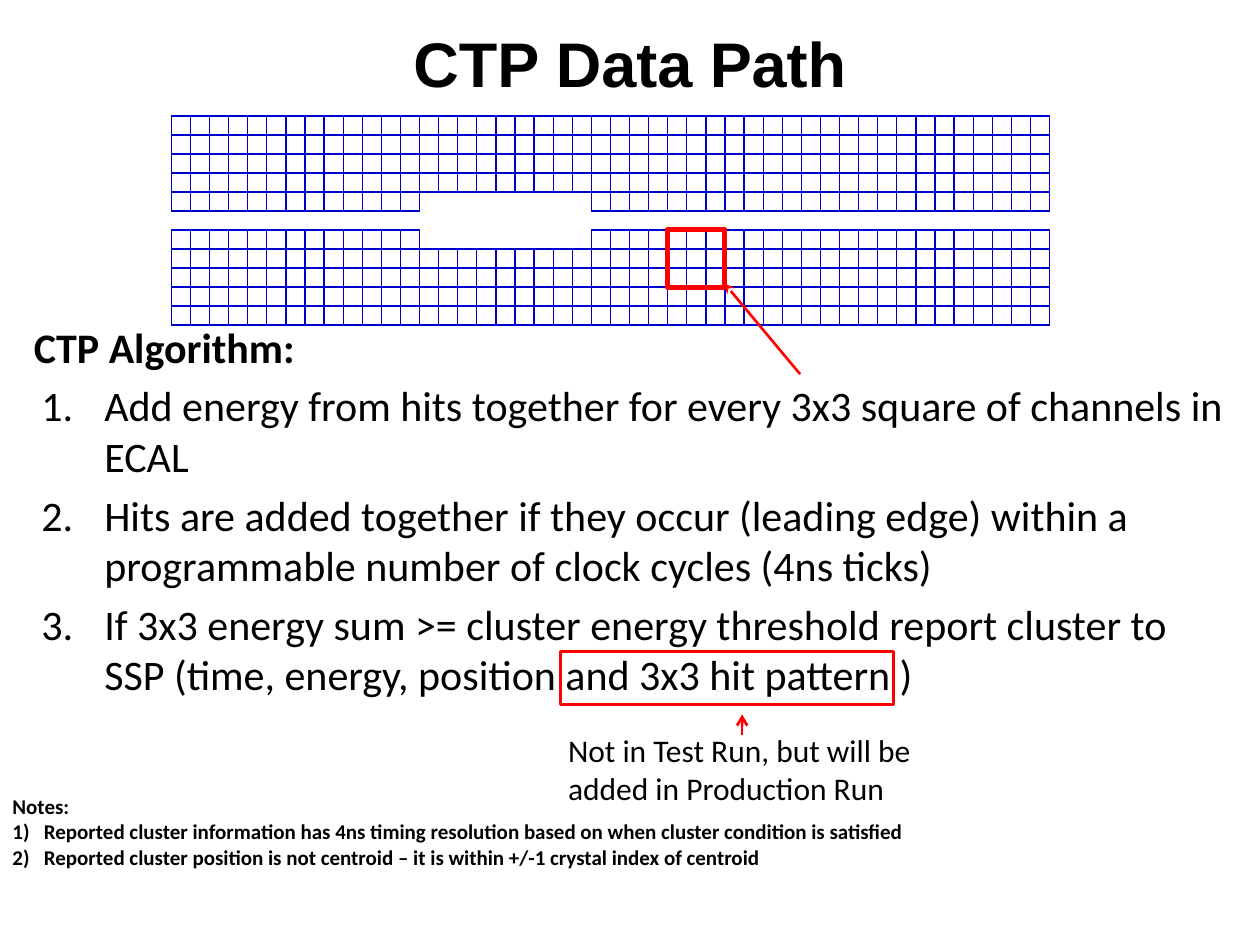
import pptx
import pptx.util
import pptx.dml.color
import pptx.enum.shapes
import pptx.enum.text
import pptx.oxml
import pptx.oxml.ns

Inches = pptx.util.Inches
Pt = pptx.util.Pt
BLUE = "0000CC"
RED = "FF0000"
BLACK = "000000"
COLUMNS, ROWS = 46, 11
HOLE_LEFT, HOLE_RIGHT = 13, 22


def color(value):
    return pptx.dml.color.RGBColor.from_string(value)


def add_element(parent, tag, **attributes):
    element = pptx.oxml.parse_xml(f"<a:{tag} {pptx.oxml.ns.nsdecls('a')}/>")
    for name, value in attributes.items():
        element.set(name, str(value))
    parent.append(element)


def add_line(shapes, start, end, line_color, width, arrowhead=None):
    points = [Inches(value) for value in (*start, *end)]
    connector = shapes.add_connector(pptx.enum.shapes.MSO_CONNECTOR.STRAIGHT, *points)
    connector.line.color.rgb = color(line_color)
    connector.line.width = Pt(width)
    if arrowhead:
        add_element(connector.line._get_or_add_ln(), "tailEnd", type=arrowhead)
    add_element(connector._element.spPr, "effectLst")


def add_frame(slide, box, width):
    shape = slide.shapes.add_shape(
        pptx.enum.shapes.MSO_SHAPE.RECTANGLE, *[Inches(value) for value in box])
    shape.shadow.inherit = False
    shape.fill.background()
    shape.line.color.rgb = color(RED)
    shape.line.width = Pt(width)


def add_text(slide, box, lines, size, font="Calibri", bold=False):
    shape = slide.shapes.add_textbox(*[Inches(value) for value in box])
    text_frame = shape.text_frame
    text_frame.word_wrap = True
    text_frame.text = "\n".join(lines)
    for paragraph in text_frame.paragraphs:
        for run in paragraph.runs:
            run.font.name = font
            run.font.size = Pt(size)
            run.font.bold = bold
            run.font.color.rgb = color(BLACK)
    return text_frame


def number_paragraphs(paragraphs, scheme, margin, hanging):
    for paragraph in paragraphs:
        properties = paragraph._p.get_or_add_pPr()
        properties.set("marL", str(Inches(margin)))
        properties.set("indent", str(-Inches(hanging)))
        add_element(properties, "buFont", typeface="+mj-lt")
        add_element(properties, "buAutoNum", type=scheme)


def add_title(slide, box):
    text_frame = add_text(slide, box, ["CTP Data Path"], 36, "Arial", True)
    text_frame.vertical_anchor = pptx.enum.text.MSO_ANCHOR.MIDDLE
    text_frame.paragraphs[0].alignment = pptx.enum.text.PP_ALIGN.CENTER


def add_crystal_grid(slide, box):
    left, top, width, height = box
    shapes = slide.shapes.add_group_shape().shapes

    def point(column, row):
        return left + column * width / COLUMNS, top + row * height / ROWS

    for column in range(COLUMNS + 1):
        inset = 1 if HOLE_LEFT < column < HOLE_RIGHT else 0
        for first, last in ((0, 5 - inset), (6 + inset, ROWS)):
            add_line(shapes, point(column, first), point(column, last), BLUE, 0.75)
    for row in range(ROWS + 1):
        spans = [(0, COLUMNS)]
        if row in (5, 6):
            spans = [(0, HOLE_LEFT), (HOLE_RIGHT, COLUMNS)]
        for first, last in spans:
            add_line(shapes, point(first, row), point(last, row), BLUE, 0.75)


def add_cluster_marker(slide, box):
    left, top, width, height = box
    add_frame(slide, box, 3)
    corner = (left + width, top + height - 0.03)
    add_line(slide.shapes, (corner[0] + 0.6, corner[1] + 0.72), corner, RED, 1.5, "stealth")


def add_notes(slide, box):
    text_frame = add_text(slide, box, [
        "Notes:",
        "Reported cluster information has 4ns timing resolution based on when cluster condition is satisfied",
        "Reported cluster position is not centroid – it is within +/-1 crystal index of centroid",
    ], 12, bold=True)
    number_paragraphs(text_frame.paragraphs[1:], "arabicParenR", 0.25, 0.25)


def add_algorithm(slide, box):
    text_frame = add_text(slide, box, [
        "CTP Algorithm:",
        "Add energy from hits together for every 3x3 square of channels in ECAL",
        "Hits are added together if they occur (leading edge) within a programmable number of clock cycles (4ns ticks)",
        "If 3x3 energy sum >= cluster energy threshold report cluster to SSP (time, energy, position and 3x3 hit pattern )",
    ], 24)
    heading, *steps = text_frame.paragraphs
    heading.runs[0].font.bold = True
    for paragraph in steps:
        paragraph.space_before = Pt(4.8)
    number_paragraphs(steps, "arabicPeriod", 0.56, 0.5)


def add_hit_pattern_callout(slide, box):
    left, top, width, height = box
    add_frame(slide, (left, top, width, 0.42), 2)
    add_text(slide, (left - 0.04, top + 0.58, 3.58, height - 0.58),
             ["Not in Test Run, but will be added in Production Run"], 18)
    add_line(slide.shapes, (left + 1.44, top + 0.66), (left + 1.44, top + 0.5),
             RED, 1.5, "arrow")


def main():
    presentation = pptx.Presentation()
    presentation.slide_width = Inches(10)
    presentation.slide_height = Inches(7.5)
    slide = presentation.slides.add_slide(presentation.slide_layouts[6])
    add_title(slide, (0.75, 0.08, 8.5, 0.83))
    add_crystal_grid(slide, (1.36, 0.92, 6.97, 1.66))
    add_cluster_marker(slide, (5.3, 1.82, 0.45, 0.46))
    add_notes(slide, (0, 6.25, 9.42, 0.71))
    add_algorithm(slide, (0.17, 2.5, 9.67, 3.2))
    add_hit_pattern_callout(slide, (4.45, 5.17, 2.64, 1.29))
    presentation.save("out.pptx")


if __name__ == "__main__":
    main()
